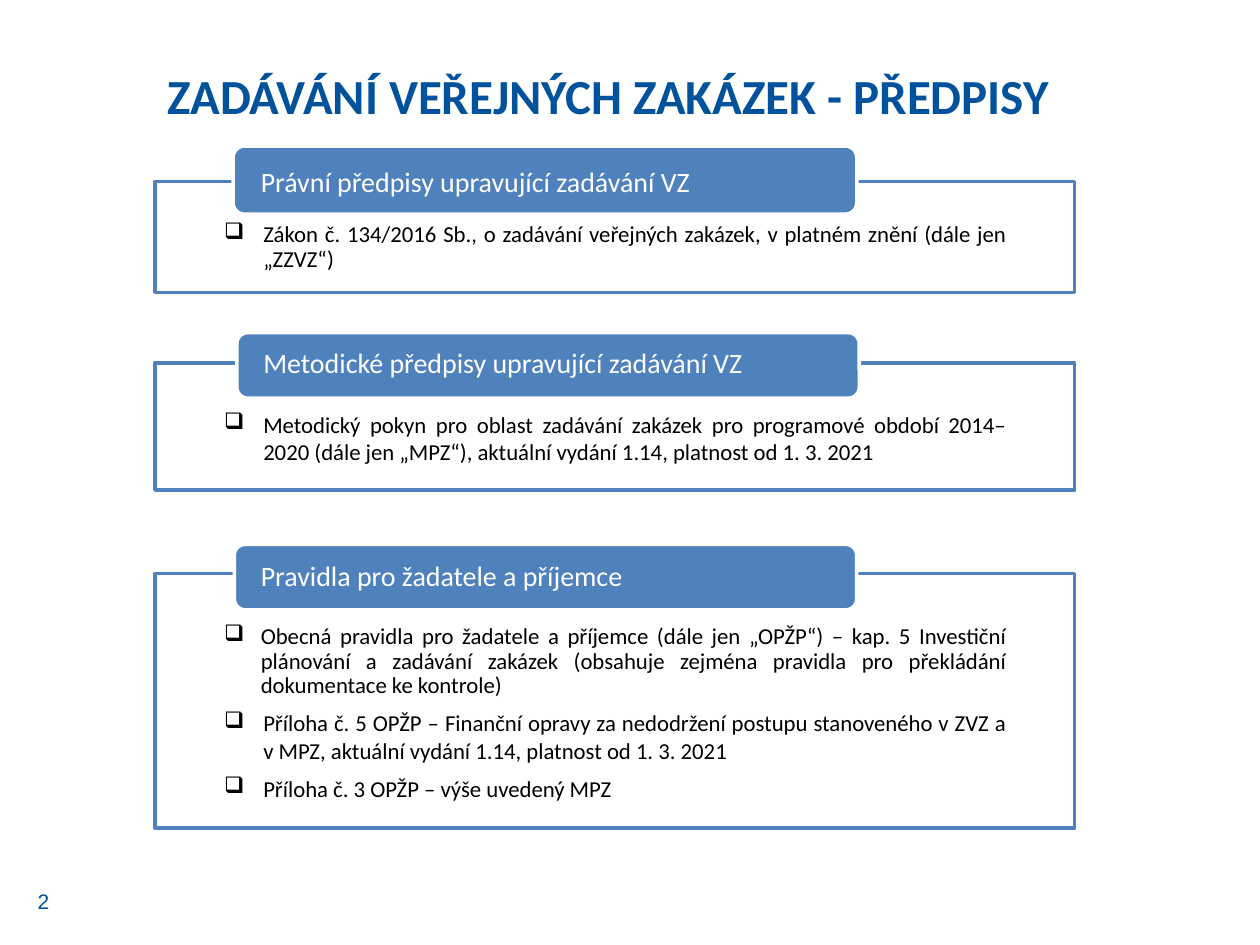
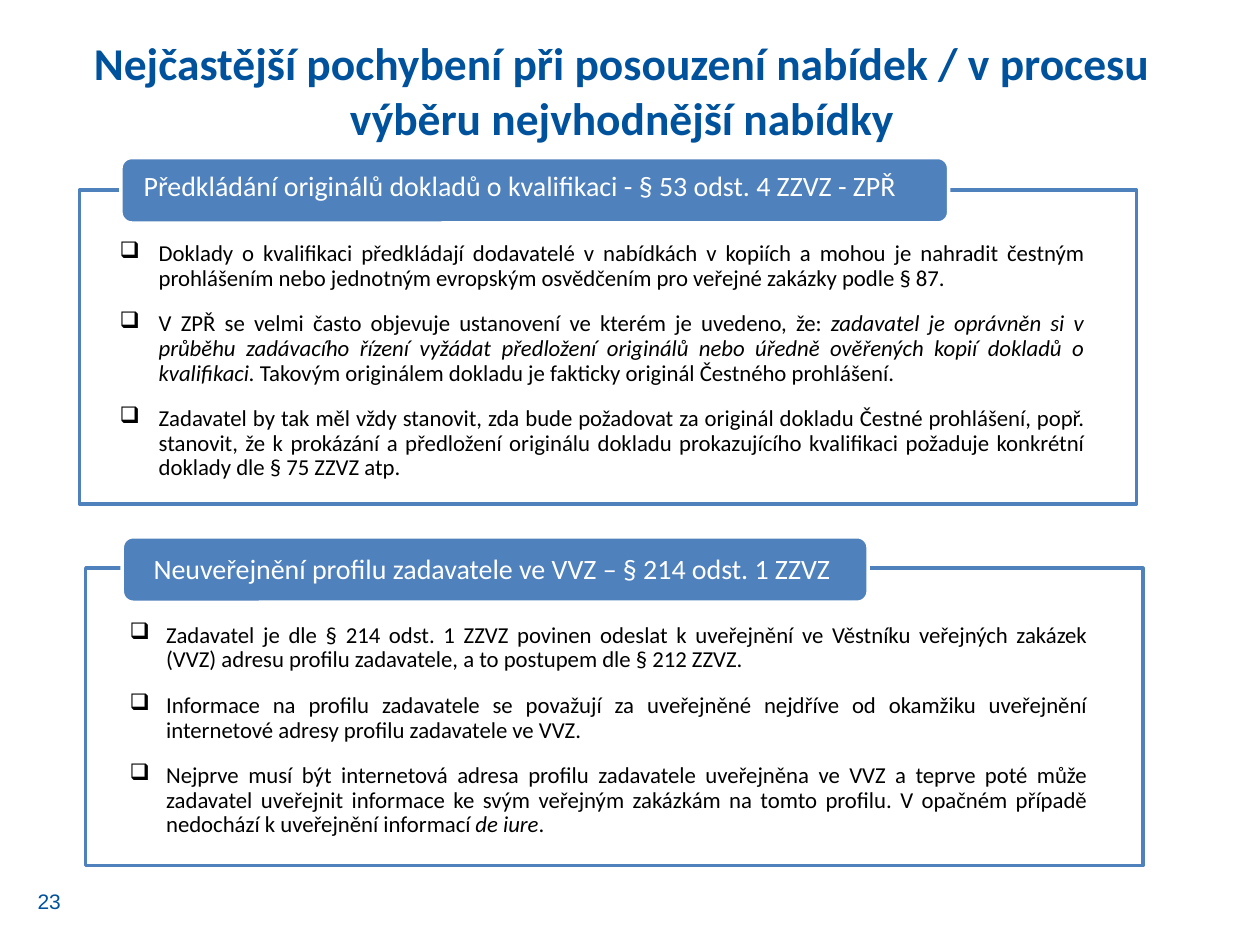
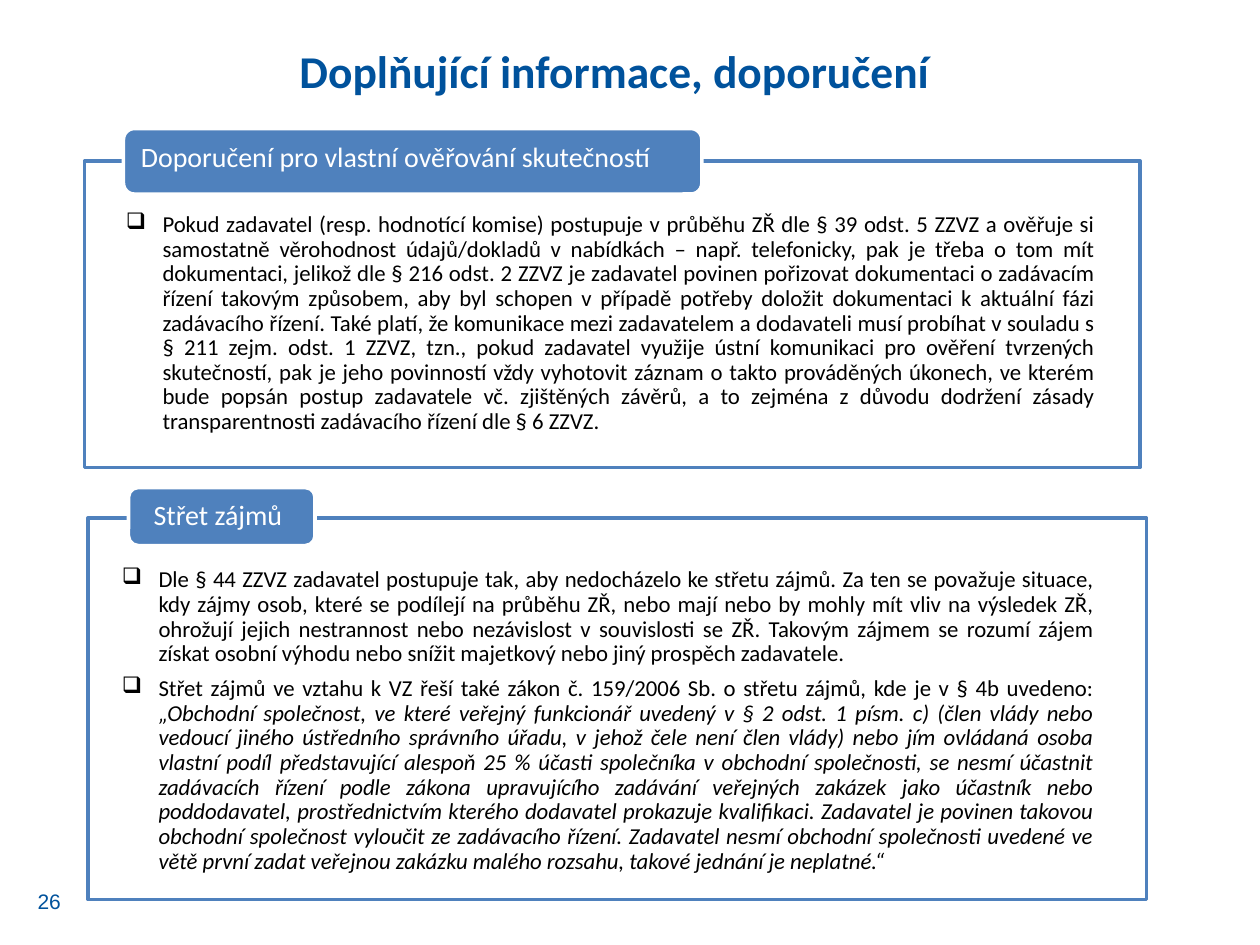
from lxml.etree import SubElement as Sub
from pptx import Presentation
from pptx.dml.color import RGBColor as RGB
from pptx.enum.shapes import MSO_SHAPE as Kind
from pptx.enum.text import MSO_ANCHOR as Anchor, PP_ALIGN as Align
from pptx.oxml.ns import qn
from pptx.util import Pt

PX = 9144
HUE = {"navy": "00529C", "blue": "4F81BD", "white": "FFFFFF", "black": "000000"}
BASE = (10, 5, 10, 5)
SLIM = (19, 0, 19, 0)
WIDE = (55, 36, 55, 9)
MID, TOP = Anchor.MIDDLE, Anchor.TOP
TIGHT, FIXED = 0.9, Pt(15.6)


def add_text(slide, box, items, size, hue, font="Calibri", bold=False,
             align=Align.LEFT, pad=BASE, anchor=TOP):
    frame = slide.shapes.add_textbox(*[n * PX for n in box]).text_frame
    frame.word_wrap = True
    frame.vertical_anchor = anchor
    (frame.margin_left, frame.margin_top,
     frame.margin_right, frame.margin_bottom) = [n * PX for n in pad]
    for i, (dent, lead, before, after, runs) in enumerate(items):
        para = frame.paragraphs[0] if i == 0 else frame.add_paragraph()
        para.alignment = align
        if dent:
            para.level = 1
            props = para._p.get_or_add_pPr()
            props.set("marL", str(dent * PX))
            props.set("indent", str(-dent * PX))
            Sub(props, qn("a:buChar"), char="❑")
        para.line_spacing = lead
        para.space_before = Pt(before if i else 0)
        para.space_after = Pt(after)
        for j, words in enumerate(runs):
            run = para.add_run()
            run.text = words
            run.font.name = font
            run.font.size = Pt(size)
            run.font.bold = bold
            run.font.italic = j % 2 == 1
            run.font.color.rgb = RGB.from_string(HUE[hue])


def add_box(slide, kind, box, fill, line):
    shape = slide.shapes.add_shape(kind, *[n * PX for n in box])
    shape.shadow.inherit = False
    shape.fill.solid()
    shape.fill.fore_color.rgb = RGB.from_string(HUE[fill])
    shape.line.color.rgb = RGB.from_string(HUE[line])
    shape.line.width = Pt(2)
    return shape


SLIDES = [
    ("2", "ZADÁVÁNÍ VEŘEJNÝCH ZAKÁZEK - PŘEDPISY", (123, 47, 813, 83), 28, Align.LEFT, [
        ((123, 144, 730, 88), (185, 116, 495, 54),
         (188, 121, 490, 49), SLIM, MID, "Právní předpisy upravující zadávání VZ",
         (123, 144, 730, 88), WIDE, [
            (31, TIGHT, 0, 2, ["Zákon č. 134/2016 Sb., o zadávání veřejných zakázek, v platném znění (dále jen „ZZVZ“)"]),
        ]),
        ((123, 288, 730, 101), (188, 264, 494, 52),
         (190, 266, 489, 47), SLIM, MID, "Metodické předpisy upravující zadávání VZ",
         (123, 291, 730, 101), WIDE, [
            (31, FIXED, 0, 6, ["Metodický pokyn pro oblast zadávání zakázek pro programové období 2014–2020 (dále jen „MPZ“), aktuální vydání 1.14, platnost od 1. 3. 2021"]),
        ]),
        ((123, 455, 730, 202), (186, 432, 494, 52),
         (188, 435, 489, 47), SLIM, MID, "Pravidla pro žadatele a příjemce",
         (123, 460, 730, 209), WIDE, [
            (29, TIGHT, 0, 0, ["Obecná pravidla pro žadatele a příjemce (dále jen „OPŽP“) – kap. 5 Investiční plánování a zadávání zakázek (obsahuje zejména pravidla pro překládání dokumentace ke kontrole)"]),
            (31, FIXED, 6, 6, ["Příloha č. 5 OPŽP – Finanční opravy za nedodržení postupu stanoveného v ZVZ a v MPZ, aktuální vydání 1.14, platnost od 1. 3. 2021"]),
            (31, FIXED, 0, 2, ["Příloha č. 3 OPŽP – výše uvedený MPZ"]),
        ]),
    ]),
    ("23", "Nejčastější pochybení při posouzení nabídek / v procesu výběru nejvhodnější nabídky",
     (59, 23, 870, 57), 26, Align.CENTER, [
        ((63, 151, 839, 249), (96, 125, 657, 52),
         (95, 125, 642, 47), SLIM, MID, "Předkládání originálů dokladů o kvalifikaci - § 53 odst. 4 ZZVZ - ZPŘ",
         (39, 156, 877, 222), (56, 36, 56, 9), [
            (31, TIGHT, 6, 6, ["Doklady o kvalifikaci předkládají dodavatelé v nabídkách v kopiích a mohou je nahradit čestným prohlášením nebo jednotným evropským osvědčením pro veřejné zakázky podle § 87."]),
            (31, TIGHT, 6, 6, [
                "V ZPŘ se velmi často objevuje ustanovení ve kterém je uvedeno, že: ",
                "zadavatel je oprávněn si v průběhu zadávacího řízení vyžádat předložení originálů nebo úředně ověřených kopií dokladů o kvalifikaci.",
                " Takovým originálem dokladu je fakticky originál Čestného prohlášení."]),
            (31, TIGHT, 6, 6, ["Zadavatel by tak měl vždy stanovit, zda bude požadovat za originál dokladu Čestné prohlášení, popř. stanovit, že k prokázání a předložení originálu dokladu prokazujícího kvalifikaci požaduje konkrétní doklady dle § 75 ZZVZ atp."]),
        ]),
        ((68, 451, 839, 236), (97, 426, 592, 52),
         (112, 436, 592, 34), BASE, TOP, "Neuveřejnění profilu zadavatele ve VVZ – § 214 odst. 1 ZZVZ",
         (93, 490, 779, 182), BASE, [
            (29, TIGHT, 6, 6, ["Zadavatel je dle § 214 odst. 1 ZZVZ povinen odeslat k uveřejnění ve Věstníku veřejných zakázek (VVZ) adresu profilu zadavatele, a to postupem dle § 212 ZZVZ."]),
            (29, TIGHT, 6, 6, ["Informace na profilu zadavatele se považují za uveřejněné nejdříve od okamžiku uveřejnění internetové adresy profilu zadavatele ve VVZ."]),
            (29, TIGHT, 6, 6, [
                "Nejprve musí být internetová adresa profilu zadavatele uveřejněna ve VVZ a teprve poté může zadavatel uveřejnit informace ke svým veřejným zakázkám na tomto profilu. V opačném případě nedochází k uveřejnění informací ",
                "de iure", "."]),
        ]),
    ]),
    ("26", "Doplňující informace, doporučení", (53, 29, 870, 57), 26, Align.CENTER, [
        ((67, 128, 838, 243), (98, 102, 459, 52),
         (102, 109, 435, 34), BASE, TOP, "Doporučení pro vlastní ověřování skutečností",
         (44, 128, 880, 228), (56, 41, 56, 9), [
            (29, TIGHT, 0, 6, [" ".join([
                "Pokud zadavatel (resp. hodnotící komise) postupuje v průběhu ZŘ dle § 39 odst. 5 ZZVZ a ověřuje si samostatně věrohodnost údajů/dokladů v nabídkách – např. telefonicky, pak je třeba o tom mít dokumentaci, jelikož dle § 216 odst. 2 ZZVZ je zadavatel povinen pořizovat dokumentaci o zadávacím řízení takovým způsobem, aby byl schopen v případě potřeby doložit dokumentaci k aktuální fázi zadávacího řízení.",
                "Také platí, že komunikace mezi zadavatelem a dodavateli musí probíhat v souladu s § 211 zejm. odst. 1 ZZVZ, tzn., pokud zadavatel využije ústní komunikaci pro ověření tvrzených skutečností, pak je jeho povinností vždy vyhotovit záznam o takto prováděných úkonech, ve kterém bude popsán postup zadavatele vč. zjištěných závěrů, a to zejména z důvodu dodržení zásady transparentnosti zadávacího řízení dle § 6 ZZVZ.",
            ])]),
        ]),
        ((70, 411, 840, 303), (102, 387, 148, 46),
         (103, 389, 147, 41), SLIM, MID, "Střet zájmů",
         (87, 446, 790, 255), BASE, [
            (29, TIGHT, 0, 6, ["Dle § 44 ZZVZ zadavatel postupuje tak, aby nedocházelo ke střetu zájmů. Za ten se považuje situace, kdy zájmy osob, které se podílejí na průběhu ZŘ, nebo mají nebo by mohly mít vliv na výsledek ZŘ, ohrožují jejich nestrannost nebo nezávislost v souvislosti se ZŘ. Takovým zájmem se rozumí zájem získat osobní výhodu nebo snížit majetkový nebo jiný prospěch zadavatele."]),
            (29, TIGHT, 0, 6, [
                "Střet zájmů ve vztahu k VZ řeší také zákon č. 159/2006 Sb. o střetu zájmů, kde je v § 4b uvedeno: ",
                " ".join([
                    "„Obchodní společnost, ve které veřejný funkcionář uvedený v § 2 odst. 1 písm. c) (člen vlády nebo vedoucí jiného ústředního správního úřadu, v jehož čele není člen vlády) nebo jím ovládaná osoba vlastní podíl představující alespoň 25 % účasti společníka v obchodní společnosti, se nesmí účastnit zadávacích řízení podle zákona upravujícího zadávání veřejných zakázek jako účastník nebo poddodavatel, prostřednictvím kterého dodavatel prokazuje kvalifikaci.",
                    "Zadavatel je povinen takovou obchodní společnost vyloučit ze zadávacího řízení. Zadavatel nesmí obchodní společnosti uvedené ve větě první zadat veřejnou zakázku malého rozsahu, takové jednání je neplatné.“",
                ])]),
        ]),
    ]),
]

deck = Presentation()
deck.slide_width, deck.slide_height = 1000 * PX, 750 * PX

for number, title, place, size, align, panels in SLIDES:
    slide = deck.slides.add_slide(deck.slide_layouts[6])
    add_text(slide, (20, 695, 55, 40), [(0, 1.0, 0, 0, [number])], 12, "navy",
             font="Arial", anchor=MID)
    add_text(slide, place, [(0, 1.0, 0, 0, [title])], size, "navy", bold=True, align=align)
    for border, tab, spot, inset, anchor, label, body, pad, items in panels:
        panel = add_box(slide, Kind.RECTANGLE, border, "white", "blue")
        tint = panel._element.spPr.find(qn("a:solidFill"))[0]
        Sub(tint, qn("a:alpha"), val="90000")
        add_text(slide, body, items, 13, "black", align=Align.JUSTIFY, pad=pad)
        add_box(slide, Kind.ROUNDED_RECTANGLE, tab, "blue", "white")
        add_text(slide, spot, [(0, TIGHT, 0, 0, [label])], 16, "white",
                 pad=inset, anchor=anchor)

deck.save("out.pptx")
